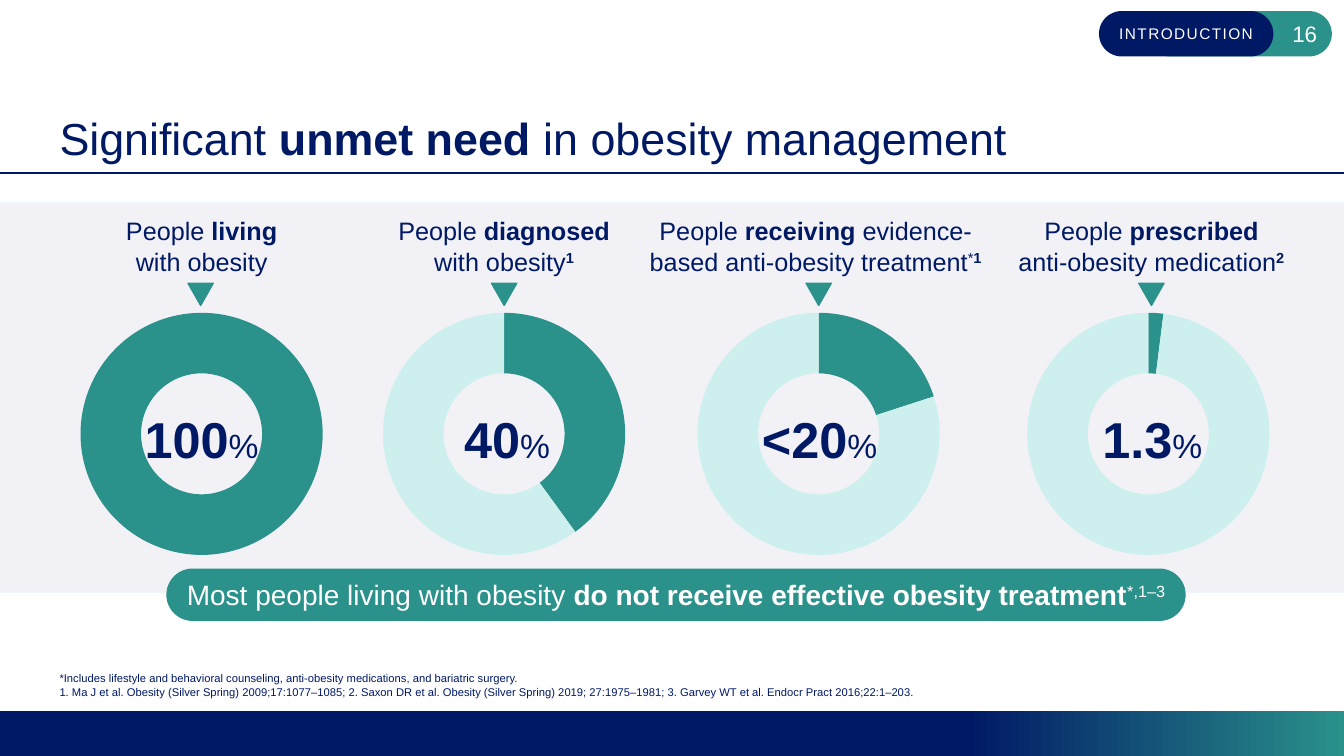
from copy import deepcopy

from lxml import etree
from pptx import Presentation
from pptx.chart.data import CategoryChartData
from pptx.dml.color import RGBColor
from pptx.enum.chart import XL_CHART_TYPE
from pptx.enum.shapes import MSO_CONNECTOR, MSO_SHAPE
from pptx.enum.text import MSO_ANCHOR, MSO_AUTO_SIZE, PP_ALIGN
from pptx.oxml import parse_xml
from pptx.oxml.ns import nsdecls, qn
from pptx.util import Inches, Pt

LEFT, CENTER, RIGHT = PP_ALIGN.LEFT, PP_ALIGN.CENTER, PP_ALIGN.RIGHT
TOP, MIDDLE, BOTTOM = MSO_ANCHOR.TOP, MSO_ANCHOR.MIDDLE, MSO_ANCHOR.BOTTOM
RECT, PILL, TRIANGLE = MSO_SHAPE.RECTANGLE, MSO_SHAPE.ROUNDED_RECTANGLE, MSO_SHAPE.ISOSCELES_TRIANGLE

# Content: a run is (text, marks), where b is bold and ^ is superscript
BREAK = ("\n", "")
TITLE = [("Significant ", ""), ("unmet need ", "b"), ("in obesity management", "")]
SECTION, PAGE = "INTRODUCTION", "16"
COLUMNS = [
    dict(heading=[("People", ""), (" living", "b"), BREAK, ("with obesity", "")],
         values=[100], label="100", width=2.95,
         heading_x=2.0, marker_x=1.99, donut_x=2.0, label_x=2.0),
    dict(heading=[("People", ""), (" diagnosed", "b"), BREAK, ("with obesity", ""), ("1", "b^")],
         values=[40, 60], label="40", width=2.95,
         heading_x=5.0, marker_x=5.0, donut_x=5.0, label_x=5.03),
    dict(heading=[("People", ""), (" receiving ", "b"),
                  ("evidence-based anti-obesity treatment", ""), ("*", "^"), ("1", "b^")],
         values=[20, 80], label="<20", width=3.64,
         heading_x=8.09, marker_x=8.12, donut_x=8.12, label_x=8.13),
    dict(heading=[("People", ""), (" prescribed", "b"), BREAK,
                  ("anti-obesity medication", ""), ("2", "b^")],
         values=[2, 98], label="1.3", width=2.95,
         heading_x=11.42, marker_x=11.42, donut_x=11.39, label_x=11.43),
]
MESSAGE = [("Most people living with obesity ", ""),
           ("do not receive effective obesity treatment", "b"), ("*,1–3", "^")]
FOOTNOTE = [
    ("*Includes lifestyle and behavioral counseling, anti-obesity medications, and bariatric surgery.", ""),
    BREAK,
    ("1. Ma J et al. Obesity (Silver Spring) 2009;17:1077–1085; 2. Saxon DR et al. Obesity (Silver Spring) "
     "2019; 27:1975–1981; 3. Garvey WT et al. Endocr Pract 2016;22:1–203.", ""),
]

THEME = dict(font="Arial", navy="001965", teal="2A918B", pale="CDF0EE", band="F2F2F6",
             edge="EEF6FC", white="FFFFFF", title=32, message=20, heading=18, page=16,
             section=11, chart=10, note=8, value=36, percent=24)

# Layout
W, H = 13.33, 7.5
MARGIN, TEXT_W = 0.59, 11.92
HEADING_Y, HEADING_H = 2.09, 0.74
MARKER_Y, MARKER_W, MARKER_H = 2.81, 0.25, 0.22
CHART_Y, CHART_W, CHART_H = 2.97, 4.01, 2.67
LABEL_Y, LABEL_W, LABEL_H = 3.93, 1.16, 0.66


def rgb(name):
    return RGBColor.from_string(THEME[name])


def box(x, y, w, h):
    return [Inches(v) for v in (x, y, w, h)]


def add_run(p, text, size, color, marks=""):
    r = p.add_run()
    r.text = text
    r.font.name, r.font.size = THEME["font"], Pt(THEME[size])
    r.font.bold = "b" in marks
    r.font.color.rgb = rgb(color)
    if "^" in marks:
        r.font._element.set("baseline", "30000")
    return r


def write(sp, runs, size, color="navy", align=LEFT, anchor=TOP, inset=(0, 0)):
    tf = sp.text_frame
    tf.word_wrap, tf.auto_size, tf.vertical_anchor = True, MSO_AUTO_SIZE.NONE, anchor
    tf.margin_left = tf.margin_right = Inches(inset[0])
    tf.margin_top = tf.margin_bottom = Inches(inset[1])
    p = tf.paragraphs[0]
    p.alignment = align
    for run in runs:
        if run == BREAK:
            p.add_line_break()
        else:
            add_run(p, run[0], size, color, run[1])
    return p


def add_shape(s, kind, place, fill, line=None, weight=1):
    sp = s.shapes.add_shape(kind, *box(*place))
    sp.shadow.inherit = False
    sp.fill.solid()
    sp.fill.fore_color.rgb = rgb(fill)
    if line:
        sp.line.color.rgb, sp.line.width = rgb(line), Pt(weight)
    else:
        sp.line.fill.background()
    if kind == PILL:
        sp.adjustments[0] = 0.5
    return sp


def add_donut(s, x, values):
    data = CategoryChartData()
    data.categories = ["1", "2"][:len(values)]
    data.add_series("Series 1", values)
    chart = s.shapes.add_chart(XL_CHART_TYPE.DOUGHNUT,
                               *box(x - CHART_W / 2, CHART_Y, CHART_W, CHART_H), data).chart
    chart.has_legend = chart.has_title = False
    chart.font.name, chart.font.size = THEME["font"], Pt(THEME["chart"])
    chart.font.color.rgb = rgb("navy")
    plot = chart.plots[0]
    plot.vary_by_categories = False
    for point, color in zip(range(len(values)), ("teal", "pale")):
        fmt = plot.series[0].points[point].format
        fmt.fill.solid()
        fmt.fill.fore_color.rgb = rgb(color)
        fmt.line.fill.background()

    # Hole size, plot area and clear background
    space = chart._chartSpace
    space.find(".//" + qn("c:holeSize")).set("val", "70")
    area = space.find(".//" + qn("c:plotArea"))
    for old in area.findall(qn("c:layout")):
        area.remove(old)
    layout = etree.Element(qn("c:layout"))
    manual = etree.SubElement(layout, qn("c:manualLayout"))
    for tag, val in (("layoutTarget", "inner"), ("xMode", "edge"), ("yMode", "edge"),
                     ("x", "0.2"), ("y", "0.05"), ("w", "0.6"), ("h", "0.9")):
        etree.SubElement(manual, qn("c:" + tag)).set("val", val)
    area.insert(0, layout)
    clear = parse_xml(f'<c:spPr {nsdecls("c", "a")}><a:noFill/><a:ln><a:noFill/></a:ln></c:spPr>')
    space.find(qn("c:chart")).addnext(clear)


def main():
    prs = Presentation()
    prs.slide_width, prs.slide_height = Inches(W), Inches(H)
    s = prs.slides.add_slide(prs.slide_layouts[5])

    # Title and rule
    title = s.shapes.title
    title.left, title.top, title.width, title.height = box(MARGIN, 0.45, TEXT_W, 1.18)
    write(title, TITLE, "title", anchor=BOTTOM)
    rule = s.shapes.add_connector(MSO_CONNECTOR.STRAIGHT, 0, Inches(1.72), Inches(W), Inches(1.72))
    rule.line.color.rgb, rule.line.width = rgb("navy"), Pt(1.5)
    etree.SubElement(rule._element.spPr, qn("a:effectLst"))

    # Section tag and page number
    page = add_shape(s, PILL, (11.38, 0.11, 1.83, 0.45), "teal")
    write(page, [(PAGE, "")], "page", "white", RIGHT, MIDDLE, (0.08, 0.04))
    tag = add_shape(s, PILL, (10.9, 0.11, 1.73, 0.45), "navy")
    p = write(tag, [(SECTION, "")], "section", "white", CENTER, MIDDLE, (0.08, 0.04))
    p.runs[0].font._element.set("spc", "100")

    # Footer gradient and grey band
    footer = add_shape(s, RECT, (0, 7.05, W, 0.45), "navy")
    footer.fill.gradient()
    footer.fill.gradient_angle = 0
    stops = footer._element.spPr.find(".//" + qn("a:gsLst"))
    stops.insert(1, deepcopy(stops[0]))
    for stop, (position, color) in zip(footer.fill.gradient_stops,
                                       ((0, "navy"), (0.72, "navy"), (1, "teal"))):
        stop.position, stop.color.rgb = position, rgb(color)
    add_shape(s, RECT, (0, 2.01, W, 3.87), "band", "edge", 0.75)

    # Columns: heading, marker, donut and value
    for col in COLUMNS:
        heading = s.shapes.add_textbox(
            *box(col["heading_x"] - col["width"] / 2, HEADING_Y, col["width"], HEADING_H))
        write(heading, col["heading"], "heading", align=CENTER, inset=(0.05, 0.05))
        marker = add_shape(s, TRIANGLE, (col["marker_x"] - MARKER_W / 2, MARKER_Y, MARKER_W, MARKER_H),
                           "teal", "teal")
        marker.rotation = 180
        add_donut(s, col["donut_x"], col["values"])
        label = s.shapes.add_textbox(*box(col["label_x"] - LABEL_W / 2, LABEL_Y, LABEL_W, LABEL_H))
        p = write(label, [(col["label"], "b")], "value", align=CENTER)
        add_run(p, "%", "percent", "navy")
        p.line_spacing = 1.2
        label.text_frame.word_wrap = False

    # Key message and footnote
    message = add_shape(s, PILL, (1.65, 5.64, 10.11, 0.52), "teal")
    write(message, MESSAGE, "message", "white", CENTER, MIDDLE, (0.08, 0.04))
    note = s.shapes.add_textbox(*box(MARGIN, 6.58, TEXT_W, 0.35))
    write(note, FOOTNOTE, "note", anchor=BOTTOM)

    prs.save("out.pptx")


if __name__ == "__main__":
    main()
